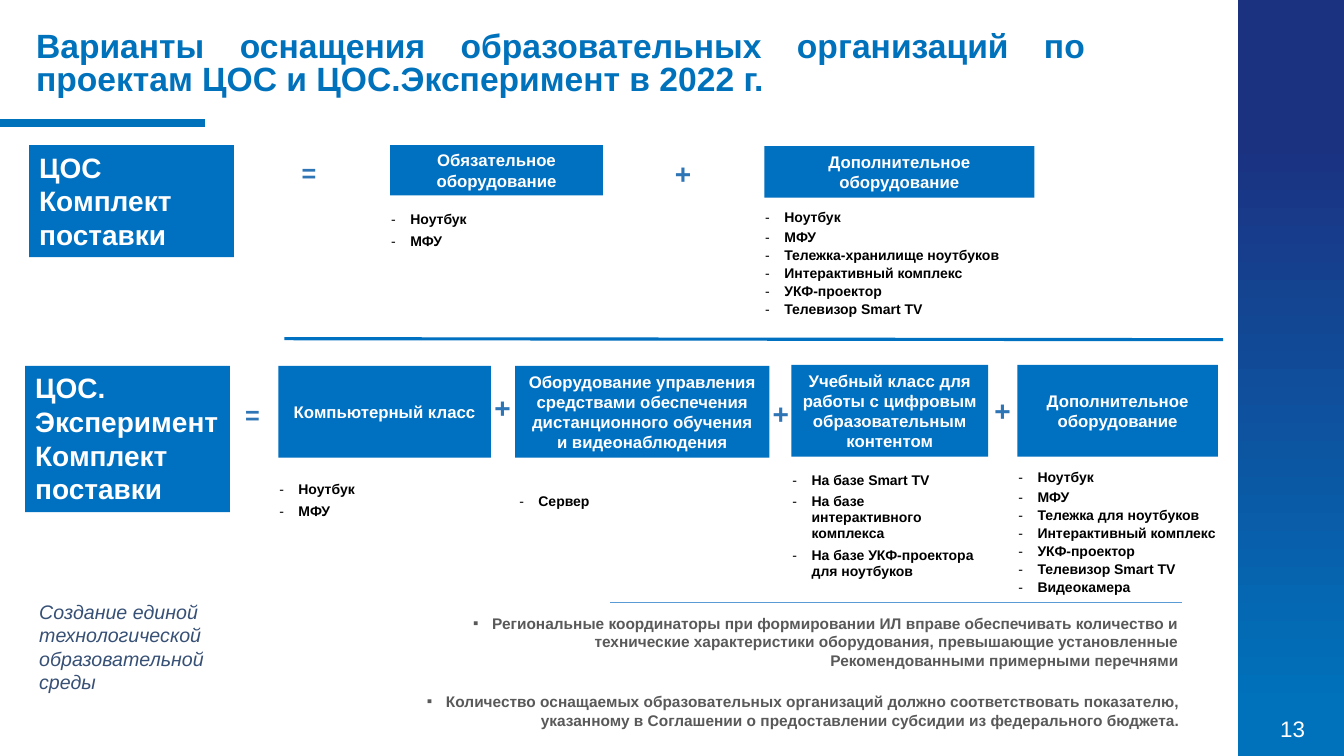
from lxml import etree
from pptx import Presentation
from pptx.dml.color import RGBColor
from pptx.enum.shapes import MSO_CONNECTOR as LINE, MSO_SHAPE as SHAPE
from pptx.enum.text import MSO_ANCHOR as ANCHOR, PP_ALIGN as ALIGN
from pptx.oxml.ns import qn

PX = 9144
COLORS = {
    "brand": "0072BC", "navy": "1B3281", "box": "0070C0", "sign": "2E75B6",
    "rule": "5B9BD5", "motto": "375075", "note": "595959",
    "white": "FFFFFF", "black": "000000",
}


def rgb(name):
    return RGBColor.from_string(COLORS[name])


class Deck:
    font = "Arial"
    indent = 19

    def __init__(self, width, height):
        self.prs = Presentation()
        self.prs.slide_width, self.prs.slide_height = self.emu(width, height)
        self.s = self.prs.slides.add_slide(self.prs.slide_layouts[6])

    def emu(self, *lengths):
        return [n * PX for n in lengths]

    def bullet(self, p, char):
        pPr = p._p.get_or_add_pPr()
        pPr.set("marL", str(self.indent * PX))
        pPr.set("indent", str(-self.indent * PX))
        etree.SubElement(pPr, qn("a:buFont")).set("typeface", self.font)
        etree.SubElement(pPr, qn("a:buChar")).set("char", char)

    def put_lines(self, tf, lines, size, color, align=ALIGN.LEFT, spacing=None,
                  char=None, bold=True, italic=False):
        tf.word_wrap = True
        look = {"size": size * 12700, "name": self.font, "bold": bold, "italic": italic}
        for i, line in enumerate(lines):
            p = tf.paragraphs[0] if i == 0 else tf.add_paragraph()
            p.alignment = align
            if spacing:
                p.line_spacing = spacing
            if char:
                self.bullet(p, char)
            r = p.add_run()
            r.text = line
            for key, value in look.items():
                setattr(r.font, key, value)
            r.font.color.rgb = rgb(color)

    def text(self, at, lines, size, color, anchor=ANCHOR.TOP, **style):
        tf = self.s.shapes.add_textbox(*self.emu(*at)).text_frame
        self.put_lines(tf, lines, size, color, **style)
        tf.vertical_anchor = anchor

    def rect(self, at):
        sp = self.s.shapes.add_shape(SHAPE.RECTANGLE, *self.emu(*at))
        sp.shadow.inherit = False
        sp.line.fill.background()
        return sp

    def box(self, at, lines, size, anchor=ANCHOR.MIDDLE, align=ALIGN.CENTER):
        sp = self.rect(at)
        sp.fill.solid()
        sp.fill.fore_color.rgb = rgb("box")
        self.put_lines(sp.text_frame, lines, size, "white", align=align)
        sp.text_frame.vertical_anchor = anchor

    def band(self, at):
        fill = self.rect(at).fill
        fill.gradient()
        fill.gradient_angle = 270
        for stop, (name, pos) in zip(fill.gradient_stops, [("navy", 0.18), ("brand", 0.94)]):
            stop.color.rgb = rgb(name)
            stop.position = pos

    def line(self, ends, color, width):
        c = self.s.shapes.add_connector(LINE.STRAIGHT, *self.emu(*ends))
        c.line.color.rgb = rgb(color)
        c.line.width = int(width * 12700)
        etree.SubElement(c._element.spPr, qn("a:effectLst"))

    def items(self, left, top, width, rows):
        at = self.emu(left, top, width, sum(h for _, h in rows))
        table = self.s.shapes.add_table(len(rows), 1, *at).table
        table.first_row = table.horz_banding = False
        margins = {"margin_left": PX, "margin_right": PX, "margin_top": PX, "margin_bottom": 0}
        for i, (name, height) in enumerate(rows):
            table.rows[i].height = height * PX
            cell = table.cell(i, 0)
            cell.fill.background()
            cell.vertical_anchor = ANCHOR.MIDDLE
            for key, value in margins.items():
                setattr(cell, key, value)
            self.put_lines(cell.text_frame, [name], 10, "black", char="-")


def heights(names, first=22, rest=18):
    return [(name, rest if i else first) for i, name in enumerate(names)]


def main():
    d = Deck(1333, 750)
    d.band((1228, 0, 105, 750))
    d.text((1242, 702, 80, 41), ["13"], 16, "white", ANCHOR.MIDDLE,
           align=ALIGN.CENTER, bold=False)
    d.line((0, 122, 203, 122), "brand", 6)
    d.text((26, 28, 1060, 75),
           ["Варианты оснащения образовательных организаций по проектам ЦОС и ЦОС.Эксперимент в 2022 г."],
           24, "brand", align=ALIGN.JUSTIFY, spacing=0.8)

    kits = [
        ((29, 144, 203, 111), ["ЦОС", "Комплект поставки"]),
        ((25, 363, 203, 145), ["ЦОС.", "Эксперимент", "Комплект поставки"]),
    ]
    for at, lines in kits:
        d.box(at, lines, 20, ANCHOR.TOP, ALIGN.LEFT)

    extra = "Дополнительное оборудование"
    groups = [
        ((387, 144, 211, 50), "Обязательное оборудование"),
        ((758, 145, 268, 51), extra),
        ((276, 363, 211, 91), "Компьютерный класс"),
        ((511, 363, 252, 91),
         "Оборудование управления средствами обеспечения дистанционного обучения и видеонаблюдения"),
        ((785, 362, 195, 91), "Учебный класс для работы с цифровым образовательным контентом"),
        ((1009, 362, 199, 91), extra),
    ]
    for at, name in groups:
        d.box(at, [name], 12)

    basic = ["Ноутбук", "МФУ"]
    shared = ["Интерактивный комплекс", "УКФ-проектор", "Телевизор Smart TV"]
    d.items(387, 206, 211, heights(basic, rest=22))
    d.items(758, 204, 268, heights(basic + ["Тележка-хранилище ноутбуков"] + shared))
    d.items(276, 474, 211, heights(basic, rest=22))
    d.items(514, 475, 211, [("Сервер", 44)])
    d.items(785, 465, 184, [
        ("На базе Smart TV", 22),
        ("На базе интерактивного комплекса", 52),
        ("На базе УКФ-проектора для ноутбуков", 39),
    ])
    d.items(1009, 462, 199, heights(basic + ["Тележка для ноутбуков"] + shared + ["Видеокамера"]))

    for left, top in [(274, 151), (218, 391)]:
        d.text((left, top, 65, 40), ["="], 18, "sign", align=ALIGN.CENTER)
    for left, top in [(646, 150), (467, 383), (743, 388), (963, 385)]:
        d.text((left, top, 63, 44), ["+"], 20, "sign", align=ALIGN.CENTER)

    d.line((282, 336, 1213, 337), "box", 2.25)
    d.line((605, 598, 1172, 598), "rule", 0.5)
    d.text((29, 590, 241, 104), ["Создание единой технологической", "образовательной среды"],
           14, "motto", bold=False, italic=True)
    notes = [
        ((451, 604, 728, 66),
         "Региональные координаторы при формировании ИЛ вправе обеспечивать количество и технические "
         "характеристики оборудования, превышающие установленные Рекомендованными примерными перечнями"),
        ((401, 682, 779, 47),
         "Количество оснащаемых образовательных организаций должно соответствовать показателю, "
         "указанному в Соглашении о предоставлении субсидии из федерального бюджета."),
    ]
    for at, note in notes:
        d.text(at, [note], 11, "note", align=ALIGN.RIGHT, char="▪")

    d.prs.save("out.pptx")


if __name__ == "__main__":
    main()
